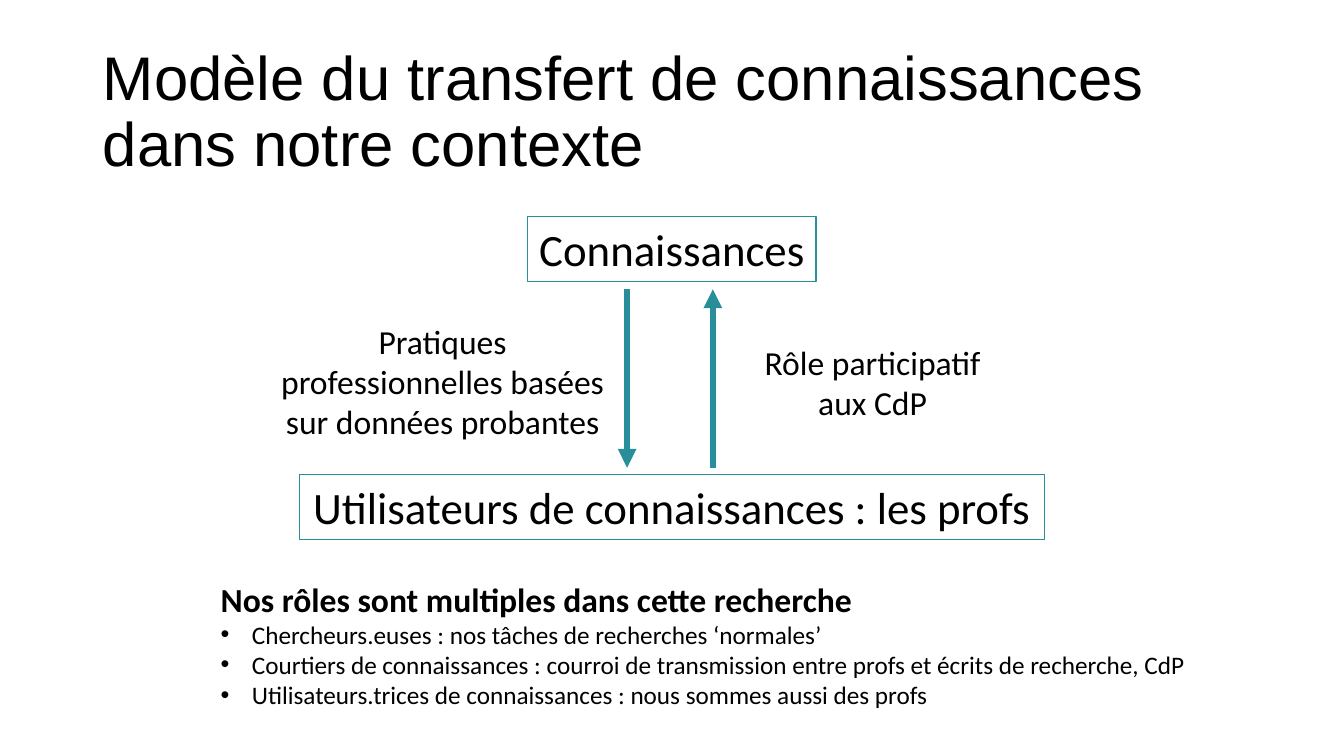
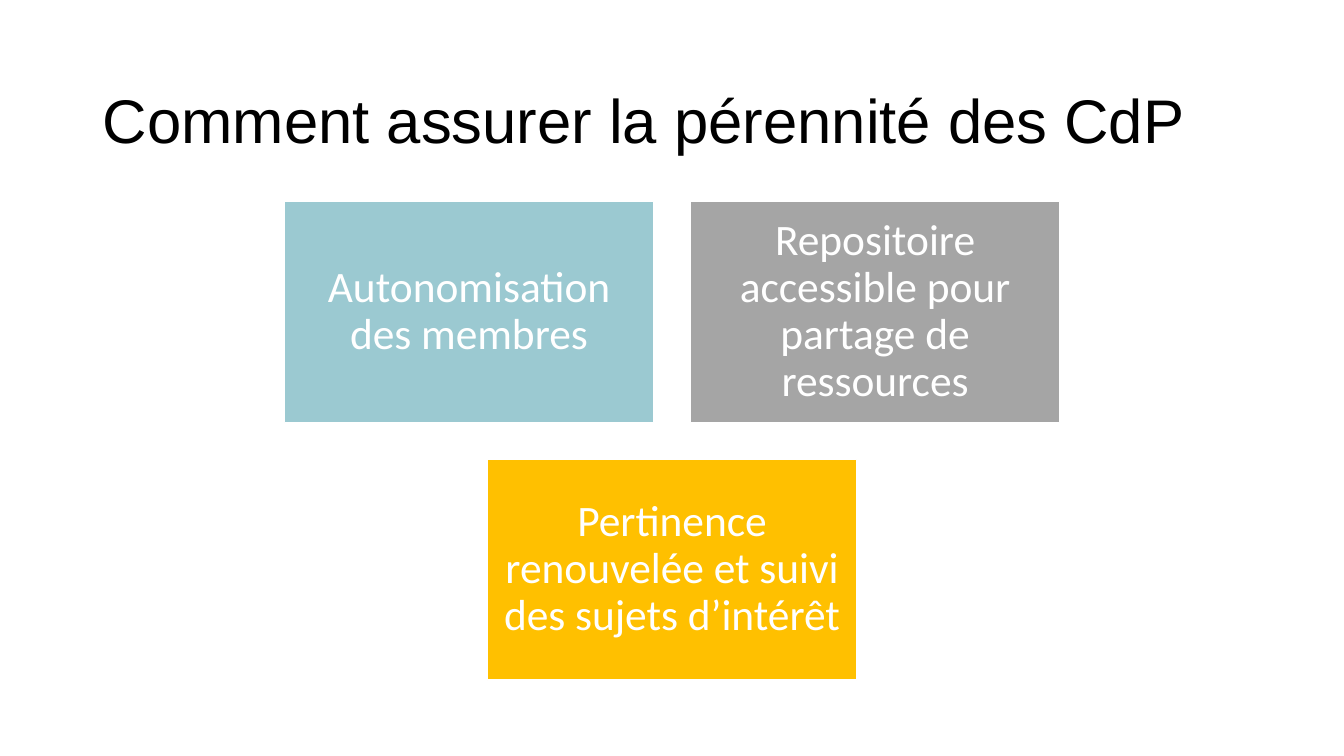
from lxml.etree import SubElement
from pptx import Presentation
from pptx.dml.color import RGBColor
from pptx.enum.shapes import MSO_CONNECTOR, MSO_SHAPE
from pptx.enum.text import MSO_ANCHOR, MSO_AUTO_SIZE, PP_ALIGN
from pptx.oxml.ns import qn
from pptx.util import Inches, Pt

SLIDE_WIDTH, SLIDE_HEIGHT = Inches(13.33), Inches(7.5)
BLACK, WHITE, TEAL = "000000", "FFFFFF", "288E9A"
PALE_TEAL, GREY, AMBER = "9BC9D1", "A5A5A5", "FFC000"
TITLE_FONT, BODY_FONT = "Arial", "Calibri"
TITLE_LEFT, TITLE_WIDTH, TITLE_BOTTOM = 6.9, 86.25, 24.67
BOX_HEIGHT = 8.53
ARROW_TOP, ARROW_BOTTOM = 38.27, 61.87
TILE_WIDTH, TILE_HEIGHT, TILE_TOP = 27.46, 29.2, 26.67
COLUMN_GAP, ROW_GAP = 2.75, 4.9


def colour(value):
    """Turn a hex string into a colour."""
    return RGBColor.from_string(value)


def across(share):
    """Turn a percentage of the slide's width into a length."""
    return round(SLIDE_WIDTH * share / 100)


def down(share):
    """Turn a percentage of the slide's height into a length."""
    return round(SLIDE_HEIGHT * share / 100)


def area(left, top, width, height):
    """Turn percentages into a position and a size."""
    return across(left), down(top), across(width), down(height)


def write(para, text, size, ink=BLACK, font=BODY_FONT, bold=False,
          align=PP_ALIGN.CENTER, spacing=1.0):
    """Fill and format one paragraph."""
    para.text = text
    para.alignment = align
    para.line_spacing = spacing
    para.font.name = font
    para.font.size = Pt(size)
    para.font.bold = bold
    para.font.color.rgb = colour(ink)


def add_bullet(para):
    """Give a paragraph a hanging round bullet."""
    properties = para._p.get_or_add_pPr()
    properties.set("marL", str(Inches(0.31)))
    properties.set("indent", str(-Inches(0.31)))
    SubElement(properties, qn("a:buFont"), typeface="Arial")
    SubElement(properties, qn("a:buChar"), char="•")


def add_page(deck, title, top):
    """Add a slide whose title ends at the shared lower edge."""
    page = deck.slides.add_slide(deck.slide_layouts[5])
    box = page.shapes.title
    box.left, box.top, box.width, box.height = area(
        TITLE_LEFT, top, TITLE_WIDTH, TITLE_BOTTOM - top)
    frame = box.text_frame
    frame.auto_size = MSO_AUTO_SIZE.NONE
    frame.vertical_anchor = MSO_ANCHOR.MIDDLE
    write(frame.paragraphs[0], title, 44, font=TITLE_FONT,
          align=PP_ALIGN.LEFT, spacing=0.9)
    return page


def add_text(page, place, wrap=True):
    """Add a text box that grows with its text."""
    frame = page.shapes.add_textbox(*area(*place)).text_frame
    frame.word_wrap = wrap
    frame.auto_size = MSO_AUTO_SIZE.SHAPE_TO_FIT_TEXT
    return frame


def add_rectangle(page, place, fill, line):
    """Add a flat rectangle with a thin outline."""
    box = page.shapes.add_shape(MSO_SHAPE.RECTANGLE, *area(*place))
    box.shadow.inherit = False
    box.fill.solid()
    box.fill.fore_color.rgb = colour(fill)
    box.line.color.rgb = colour(line)
    box.line.width = Pt(1)
    return box


def add_stage(page, text, top, width):
    """Add a centred outlined box of the transfer model."""
    place = ((100 - width) / 2, top, width, BOX_HEIGHT)
    frame = add_rectangle(page, place, WHITE, TEAL).text_frame
    frame.word_wrap = False
    frame.auto_size = MSO_AUTO_SIZE.SHAPE_TO_FIT_TEXT
    frame.vertical_anchor = MSO_ANCHOR.TOP
    write(frame.paragraphs[0], text, 32)


def add_arrow(page, left, start, end):
    """Add a thick vertical arrow."""
    arrow = page.shapes.add_connector(
        MSO_CONNECTOR.STRAIGHT, across(left), down(start), across(left), down(end))
    arrow.line.color.rgb = colour(TEAL)
    arrow.line.width = Pt(4.5)
    SubElement(arrow.line._get_or_add_ln(), qn("a:tailEnd"), type="triangle")
    SubElement(arrow._element.spPr, qn("a:effectLst"))


def add_roles(page, heading, roles):
    """Add a bold heading with a bulleted list below it."""
    frame = add_text(page, (15.68, 75.87, 74.19, 18.8), wrap=False)
    write(frame.paragraphs[0], heading, 24, bold=True, align=PP_ALIGN.LEFT)
    for role in roles:
        para = frame.add_paragraph()
        add_bullet(para)
        write(para, role, 18, align=PP_ALIGN.LEFT)


def add_tile(page, text, fill, place):
    """Add a coloured tile with white text."""
    frame = add_rectangle(page, place, fill, WHITE).text_frame
    frame.margin_left = frame.margin_right = Inches(0.13)
    frame.margin_top = frame.margin_bottom = Inches(0.13)
    frame.vertical_anchor = MSO_ANCHOR.MIDDLE
    frame.word_wrap = True
    write(frame.paragraphs[0], text, 31, ink=WHITE, spacing=0.9)


def add_tile_rows(page, rows):
    """Add rows of tiles, each row centred on the slide."""
    for row, tiles in enumerate(rows):
        row_width = len(tiles) * (TILE_WIDTH + COLUMN_GAP) - COLUMN_GAP
        top = TILE_TOP + row * (TILE_HEIGHT + ROW_GAP)
        for column, (text, fill) in enumerate(tiles):
            left = (100 - row_width) / 2 + column * (TILE_WIDTH + COLUMN_GAP)
            add_tile(page, text, fill, (left, top, TILE_WIDTH, TILE_HEIGHT))


def add_model_page(deck):
    """Build the slide with the knowledge transfer model."""
    page = add_page(deck, "Modèle du transfert de connaissances dans notre contexte", 5.33)
    add_roles(page, "Nos rôles sont multiples dans cette recherche", (
        "Chercheurs.euses : nos tâches de recherches ‘normales’",
        "Courtiers de connaissances : courroi de transmission entre profs et écrits de recherche, CdP",
        "Utilisateurs.trices de connaissances : nous sommes aussi des profs",
    ))
    for text, place in (
        ("Pratiques professionnelles basées sur données probantes", (18.9, 41.73, 28.06, 17.47)),
        ("Rôle participatif aux CdP", (55.44, 44.53, 18.98, 12.13)),
    ):
        write(add_text(page, place).paragraphs[0], text, 24)
    add_stage(page, "Connaissances", 28.67, 21.46)
    add_arrow(page, 46.66, ARROW_TOP, ARROW_BOTTOM)
    add_arrow(page, 53.04, ARROW_BOTTOM, ARROW_TOP)
    add_stage(page, "Utilisateurs de connaissances : les profs", 62.8, 55.44)


def add_durability_page(deck):
    """Build the slide on how to make the communities last."""
    page = add_page(deck, "Comment assurer la pérennité des CdP", 8.13)
    add_tile_rows(page, (
        (("Autonomisation des membres", PALE_TEAL),
         ("Repositoire accessible pour partage de ressources", GREY)),
        (("Pertinence renouvelée et suivi des sujets d’intérêt", AMBER),),
    ))


def main():
    """Build and save the presentation."""
    deck = Presentation()
    deck.slide_width, deck.slide_height = SLIDE_WIDTH, SLIDE_HEIGHT
    add_model_page(deck)
    add_durability_page(deck)
    deck.save("out.pptx")


if __name__ == "__main__":
    main()
